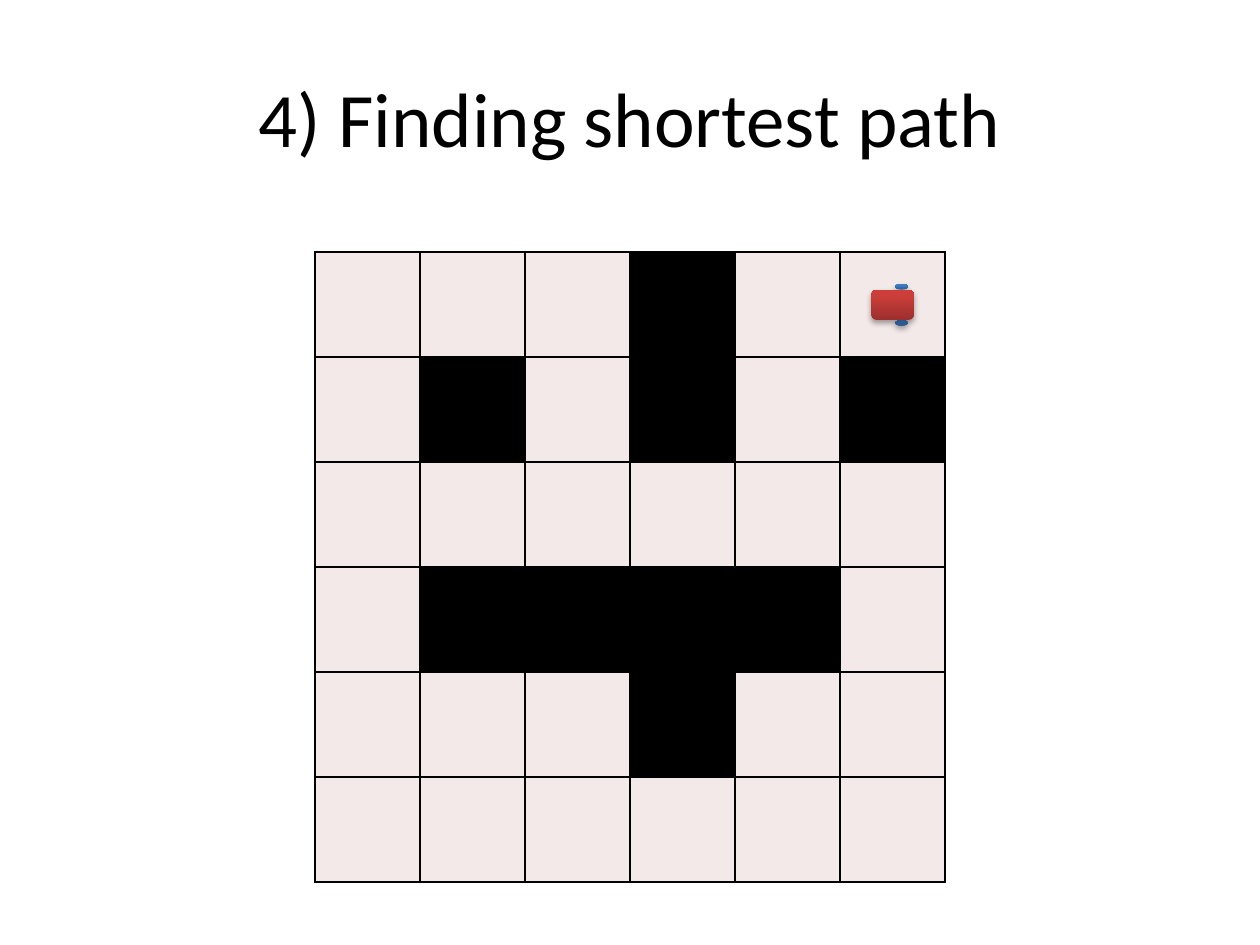
import lxml.etree
import pptx
import pptx.dml.color
import pptx.enum.shapes
import pptx.enum.text
import pptx.oxml.ns
import pptx.util

Cm = pptx.util.Cm
RGBColor = pptx.dml.color.RGBColor
Shape = pptx.enum.shapes.MSO_SHAPE
qn = pptx.oxml.ns.qn

BLACK = RGBColor(0x00, 0x00, 0x00)
FLOOR = RGBColor(0xF4, 0xE9, 0xE9)
BODY_DARK = RGBColor(0x9C, 0x2F, 0x2D)
BODY_LIGHT = RGBColor(0xCB, 0x3E, 0x3A)
WHEEL_DARK = RGBColor(0x2F, 0x5F, 0x99)
WHEEL_LIGHT = RGBColor(0x3D, 0x7C, 0xC7)

# "#" is a wall, "." is free floor
MAZE = [
    "...#..",
    ".#.#.#",
    "......",
    ".####.",
    "...#..",
    "......",
]


class SlideBuilder:
    font = "Calibri"
    title_size = pptx.util.Pt(44)
    border_width = pptx.util.Pt(1)

    def __init__(self, slide):
        self.slide = slide

    def title(self, text, left, top, width, height):
        box = self.slide.shapes.add_textbox(left, top, width, height)
        frame = box.text_frame
        frame.word_wrap = True
        frame.vertical_anchor = pptx.enum.text.MSO_ANCHOR.MIDDLE
        paragraph = frame.paragraphs[0]
        paragraph.alignment = pptx.enum.text.PP_ALIGN.CENTER
        run = paragraph.add_run()
        run.text = text
        run.font.name = self.font
        run.font.size = self.title_size
        run.font.color.rgb = BLACK

    def border(self, cell):
        properties = cell._tc.get_or_add_tcPr()
        for side in ("a:lnL", "a:lnR", "a:lnT", "a:lnB"):
            line = lxml.etree.SubElement(properties, qn(side), w=str(self.border_width))
            fill = lxml.etree.SubElement(line, qn("a:solidFill"))
            lxml.etree.SubElement(fill, qn("a:srgbClr"), val=str(BLACK))

    def maze(self, rows, left, top, size):
        count = len(rows)
        table = self.slide.shapes.add_table(count, count, left, top, size, size).table
        for row_index, row in enumerate(rows):
            for column_index, mark in enumerate(row):
                cell = table.cell(row_index, column_index)
                self.border(cell)
                cell.fill.solid()
                cell.fill.fore_color.rgb = BLACK if mark == "#" else FLOOR

    def shadow(self, shape):
        shape.shadow.inherit = False
        effects = shape._element.spPr.find(qn("a:effectLst"))
        outer = lxml.etree.SubElement(
            effects, qn("a:outerShdw"), blurRad="40000", dist="23000",
            dir="5400000", rotWithShape="0")
        color = lxml.etree.SubElement(outer, qn("a:srgbClr"), val=str(BLACK))
        lxml.etree.SubElement(color, qn("a:alpha"), val="35000")

    def car_part(self, group, kind, left, top, width, height, dark, light):
        shape = group.shapes.add_shape(kind, left, top, width, height)
        shape.fill.gradient()
        shape.fill.gradient_angle = 90
        stops = shape.fill.gradient_stops
        for stop, position, color in zip(stops, (0, 0.8), (dark, light)):
            stop.position = position
            stop.color.rgb = color
        shape.line.fill.background()
        self.shadow(shape)

    def car(self, left, top):
        group = self.slide.shapes.add_group_shape()
        # Wheels lie behind the body
        for wheel_top in (top, top + Cm(0.73)):
            self.car_part(group, Shape.OVAL, left + Cm(0.48), wheel_top,
                          Cm(0.25), Cm(0.12), WHEEL_DARK, WHEEL_LIGHT)
        self.car_part(group, Shape.ROUNDED_RECTANGLE, left, top + Cm(0.12),
                      Cm(0.85), Cm(0.61), BODY_DARK, BODY_LIGHT)


def main():
    presentation = pptx.Presentation()
    presentation.slide_width = Cm(25.4)
    presentation.slide_height = Cm(19.05)
    builder = SlideBuilder(presentation.slides.add_slide(presentation.slide_layouts[6]))

    # Maze
    builder.maze(MAZE, Cm(6.35), Cm(5.08), Cm(12.7))

    # Heading
    builder.title("4) Finding shortest path", Cm(1.27), Cm(0.76), Cm(22.86), Cm(3.18))

    # Car in the top right cell
    builder.car(Cm(17.57), Cm(5.72))

    presentation.save("out.pptx")


if __name__ == "__main__":
    main()
